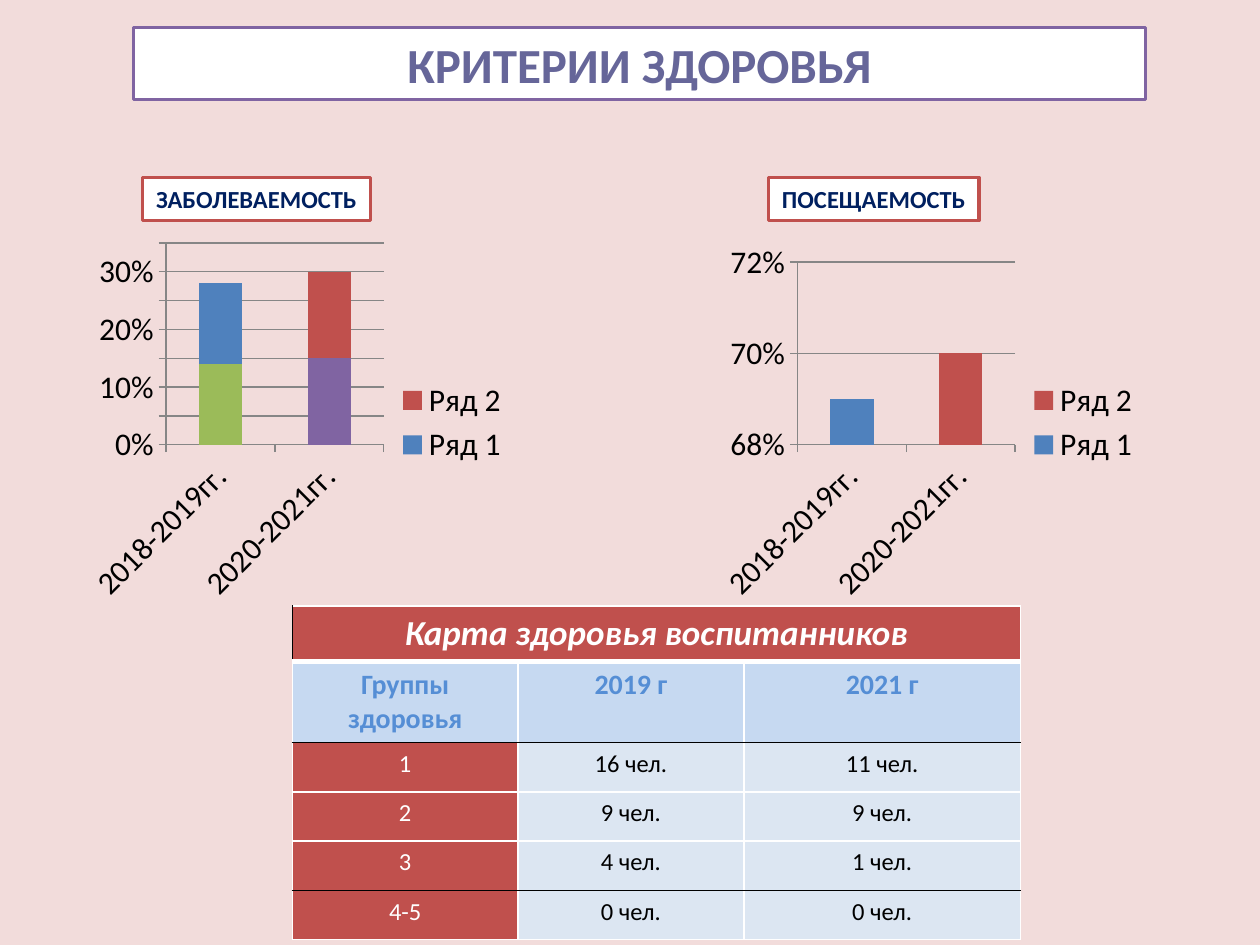
from dataclasses import dataclass

from lxml import etree
from pptx import Presentation
from pptx.chart.data import CategoryChartData
from pptx.dml.color import RGBColor
from pptx.enum.chart import XL_CHART_TYPE, XL_LEGEND_POSITION, XL_TICK_MARK
from pptx.enum.shapes import MSO_SHAPE
from pptx.enum.text import MSO_ANCHOR, PP_ALIGN
from pptx.oxml.ns import qn
from pptx.util import Inches, Pt

STACKED = XL_CHART_TYPE.COLUMN_STACKED
RIGHT = XL_LEGEND_POSITION.RIGHT
OUTSIDE = XL_TICK_MARK.OUTSIDE
RECT = MSO_SHAPE.RECTANGLE
MIDDLE = MSO_ANCHOR.MIDDLE
CENTER = PP_ALIGN.CENTER

WIDE, HIGH = Inches(10), Inches(7.5)
FONT = "Calibri"
WHITE, BLACK, GRAY = "FFFFFF", "000000", "868686"
RED, BLUE, GREEN, PURPLE = "C0504D", "4F81BD", "9BBB59", "8064A2"
YEARS = ["2018-2019гг.", "2020-2021гг."]


@dataclass
class Box:
    """Place on the slide, in percent of its width and height."""
    x: float
    y: float
    w: float
    h: float

    def emu(self) -> list[int]:
        return [round(part * full / 100) for part, full in
                zip((self.x, self.y, self.w, self.h), (WIDE, HIGH) * 2)]


@dataclass
class Series:
    name: str
    values: list
    color: str


@dataclass
class Panel:
    label: str
    label_box: Box
    chart_box: Box
    low: float
    top: float
    step: float
    series: list[Series]
    hidden: int = 0  # leading series left out of the legend


@dataclass
class Row:
    texts: list[str]
    size: int
    weight: int  # share of the table's height
    colors: list[str]
    fills: list[str]
    bold: bool = False
    italic: bool = False
    left: str = WHITE
    above: str = WHITE
    below: str = WHITE
    base: float = 1  # width of the lower border


def rgb(color: str) -> RGBColor:
    return RGBColor.from_string(color)


def style(frame, size: int, color: str, bold: bool = False,
          italic: bool = False) -> None:
    for para in frame.paragraphs:
        para.alignment = CENTER
        for run in para.runs:
            font = run.font
            font.name, font.size = FONT, Pt(size)
            font.bold, font.italic = bold, italic
            font.color.rgb = rgb(color)


def frame_box(shape, line: str) -> None:
    shape.fill.solid()
    shape.fill.fore_color.rgb = rgb(WHITE)
    shape.line.color.rgb = rgb(line)
    shape.line.width = Pt(2)


def add_label(slide, panel: Panel) -> None:
    shape = slide.shapes.add_shape(RECT, *panel.label_box.emu())
    shape.shadow.inherit = False
    frame_box(shape, RED)
    shape.text_frame.text = panel.label
    shape.text_frame.word_wrap = False
    style(shape.text_frame, 14, "002060", bold=True)


def add_columns(slide, panel: Panel) -> None:
    data = CategoryChartData(number_format="0%")
    data.categories = YEARS
    for item in panel.series:
        data.add_series(item.name, item.values)
    chart = slide.shapes.add_chart(STACKED, *panel.chart_box.emu(), data).chart
    chart.has_title = False
    chart.font.name, chart.font.size = FONT, Pt(18)
    chart.font.color.rgb = rgb(BLACK)

    plot = chart.plots[0]
    plot.gap_width, plot.overlap, plot.vary_by_categories = 150, 100, False
    for bar, item in zip(plot.series, panel.series):
        bar.format.fill.solid()
        bar.format.fill.fore_color.rgb = rgb(item.color)

    scale = chart.value_axis
    scale.minimum_scale, scale.maximum_scale = panel.low, panel.top
    scale.major_unit = panel.step
    scale.has_major_gridlines = True
    scale.tick_labels.number_format = "0%"
    scale.tick_labels.number_format_is_linked = False
    for axis in (scale, chart.category_axis):
        axis.major_tick_mark = OUTSIDE
    for part in (scale, chart.category_axis, scale.major_gridlines):
        part.format.line.color.rgb = rgb(GRAY)
        part.format.line.width = Pt(0.75)

    chart.has_legend = True
    chart.legend.position = RIGHT
    chart.legend.include_in_layout = False
    place = chart.legend._element.find(qn("c:legendPos"))
    for index in reversed(range(panel.hidden)):
        entry = etree.Element(qn("c:legendEntry"))
        etree.SubElement(entry, qn("c:idx")).set("val", str(index))
        etree.SubElement(entry, qn("c:delete")).set("val", "1")
        place.addnext(entry)


def set_border(cell, side: str, color: str, width: float) -> None:
    line = etree.Element(qn(f"a:ln{side}"), w=str(Pt(width)))
    fill = etree.SubElement(line, qn("a:solidFill"))
    etree.SubElement(fill, qn("a:srgbClr")).set("val", color)
    props = cell._tc.get_or_add_tcPr()
    props.insert(len(props.findall("*")) - 1, line)  # just before the fill


def add_grid(slide, box: Box, shares: list[int], rows: list[Row]) -> None:
    left, top, width, height = box.emu()
    table = slide.shapes.add_table(len(rows), len(shares), left, top,
                                   width, height).table
    for column, share in zip(table.columns, shares):
        column.width = round(width * share / sum(shares))
    total = sum(row.weight for row in rows)
    for r, row in enumerate(rows):
        table.rows[r].height = round(height * row.weight / total)
        for c, text in enumerate(row.texts):
            cell = table.cell(r, c)
            cell.text_frame.text = text
            style(cell.text_frame, row.size, row.colors[c], row.bold, row.italic)
            cell.fill.solid()
            cell.fill.fore_color.rgb = rgb(row.fills[c])
            set_border(cell, "L", WHITE if c else row.left, 1)
            set_border(cell, "R", WHITE, 1)
            set_border(cell, "T", row.above, 1)
            set_border(cell, "B", row.below, row.base)
    table.cell(0, 0).merge(table.cell(0, len(shares) - 1))


def count_row(group: str, before: int, after: int, **lines) -> Row:
    return Row([group, f"{before} чел.", f"{after} чел."], 14, 10,
               [WHITE, BLACK, BLACK], [RED, "DCE6F2", "DCE6F2"], **lines)


PANELS = [
    Panel("ЗАБОЛЕВАЕМОСТЬ", Box(11.3, 18.8, 18.1, 4.53),
          Box(6.2, 24.93, 35.2, 39.6), 0, 0.35, 0.05,
          [Series("Ряд 1", [0.14, None], GREEN),
           Series("Ряд 2", [None, 0.15], PURPLE),
           Series("Ряд 1", [0.14, None], BLUE),
           Series("Ряд 2", [None, 0.15], RED)], hidden=2),
    Panel("ПОСЕЩАЕМОСТЬ", Box(61, 18.8, 16.7, 4.53),
          Box(56.3, 24.93, 35.2, 39.6), 0.68, 0.72, 0.02,
          [Series("Ряд 1", [0.69, None], BLUE),
           Series("Ряд 2", [None, 0.7], RED)]),
]
ROWS = [
    Row(["Карта здоровья воспитанников", "", ""], 20, 11, [WHITE] * 3, [RED] * 3,
        bold=True, italic=True, left=BLACK, base=3),
    Row(["Группы здоровья", "2019 г", "2021 г"], 16, 16, ["558ED5"] * 3,
        ["C6D9F1"] * 3, bold=True, below=BLACK),
    count_row("1", 16, 11, above=BLACK),
    count_row("2", 9, 9),
    count_row("3", 4, 1, below=BLACK),
    count_row("4-5", 0, 0, above=BLACK),
]


def main() -> None:
    deck = Presentation()
    deck.slide_width, deck.slide_height = WIDE, HIGH
    slide = deck.slides.add_slide(deck.slide_layouts[5])
    slide.background.fill.solid()
    slide.background.fill.fore_color.rgb = rgb("F2DCDB")

    # Title
    title = slide.shapes.title
    title.left, title.top, title.width, title.height = Box(
        10.6, 2.93, 80.3, 7.6).emu()
    frame_box(title, PURPLE)
    title.text_frame.text = "КРИТЕРИИ ЗДОРОВЬЯ"
    title.text_frame.vertical_anchor = MIDDLE
    style(title.text_frame, 28, "666699", bold=True)

    # Charts with their labels
    for panel in PANELS:
        add_columns(slide, panel)
        add_label(slide, panel)

    # Health table
    add_grid(slide, Box(23.2, 64.13, 57.8, 34.93), [31, 31, 38], ROWS)
    deck.save("out.pptx")


if __name__ == "__main__":
    main()
